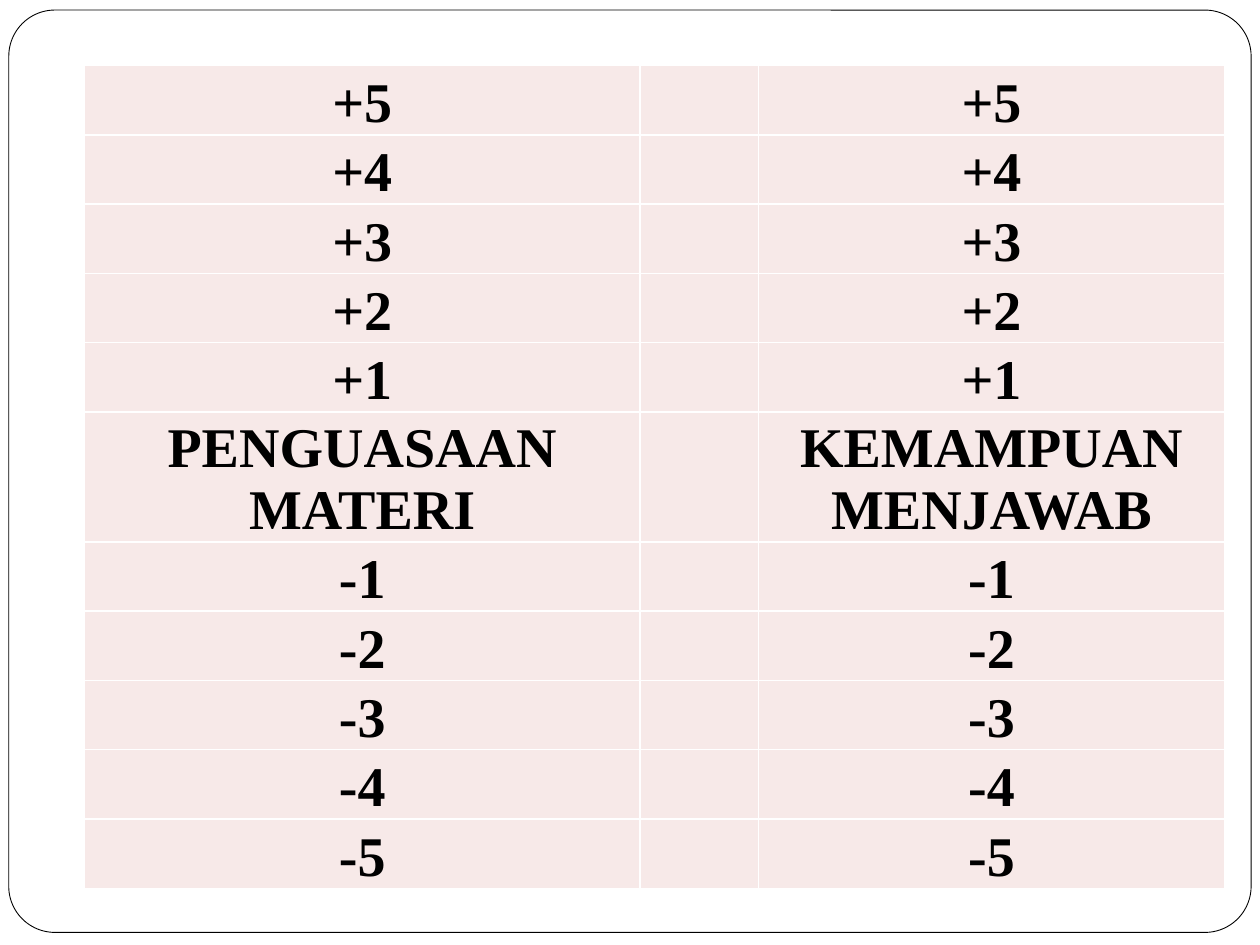
from lxml import etree
from pptx import Presentation
from pptx.dml.color import RGBColor
from pptx.enum import shapes, text
from pptx.oxml import ns
from pptx.util import Inches, Pt


def color(value):
    return RGBColor.from_string(value)


def add_borders(cell, value, width):
    """Draw all four sides; the lines must precede the fill in tcPr."""
    properties = cell._tc.get_or_add_tcPr()
    for index, side in enumerate(("lnL", "lnR", "lnT", "lnB")):
        line = etree.Element(ns.qn(f"a:{side}"), w=str(Pt(width)))
        fill = etree.SubElement(line, ns.qn("a:solidFill"))
        etree.SubElement(fill, ns.qn("a:srgbClr"), val=value)
        properties.insert(index, line)


deck = Presentation()
deck.slide_width, deck.slide_height = Inches(10), Inches(7.5)
page = deck.slides.add_slide(deck.slide_layouts[6])

frame = page.shapes.add_shape(
    shapes.MSO_SHAPE.ROUNDED_RECTANGLE,
    Inches(0.07), Inches(0.08), Inches(9.86), Inches(7.32))
frame.adjustments[0] = 0.05
frame.shadow.inherit = False
frame.fill.solid()
frame.fill.fore_color.rgb = color("FFFFFF")
frame.line.color.rgb = color("000000")
frame.line.width = Pt(0.5)

scores = range(5, -6, -1)
headings = ("PENGUASAAN MATERI", "", "KEMAMPUAN MENJAWAB")
column_widths = (4.41, 0.94, 3.7)
score_height, heading_height = 0.55, 1.03

table = page.shapes.add_table(
    len(scores), len(headings), Inches(0.67), Inches(0.52),
    Inches(sum(column_widths)), Inches(10 * score_height + heading_height)).table
table.first_row = table.horz_banding = False
for column, width in zip(table.columns, column_widths):
    column.width = Inches(width)

for row, score in zip(table.rows, scores):
    row.height = Inches(score_height if score else heading_height)
    for cell, heading in zip(row.cells, headings):
        cell.fill.solid()
        cell.fill.fore_color.rgb = color("F7E9E8")
        add_borders(cell, "FFFFFF", 1)
        if not heading:
            continue
        cell.vertical_anchor = text.MSO_ANCHOR.BOTTOM
        cell.margin_left = cell.margin_right = cell.margin_top = Inches(0.01)
        cell.margin_bottom = 0
        para = cell.text_frame.paragraphs[0]
        para.alignment = text.PP_ALIGN.CENTER
        span = para.add_run()
        span.text = f"{score:+d}" if score else heading
        span.font.name = "Times New Roman"
        span.font.size = Pt(32)
        span.font.bold = True
        span.font.color.rgb = color("000000")

deck.save("out.pptx")
